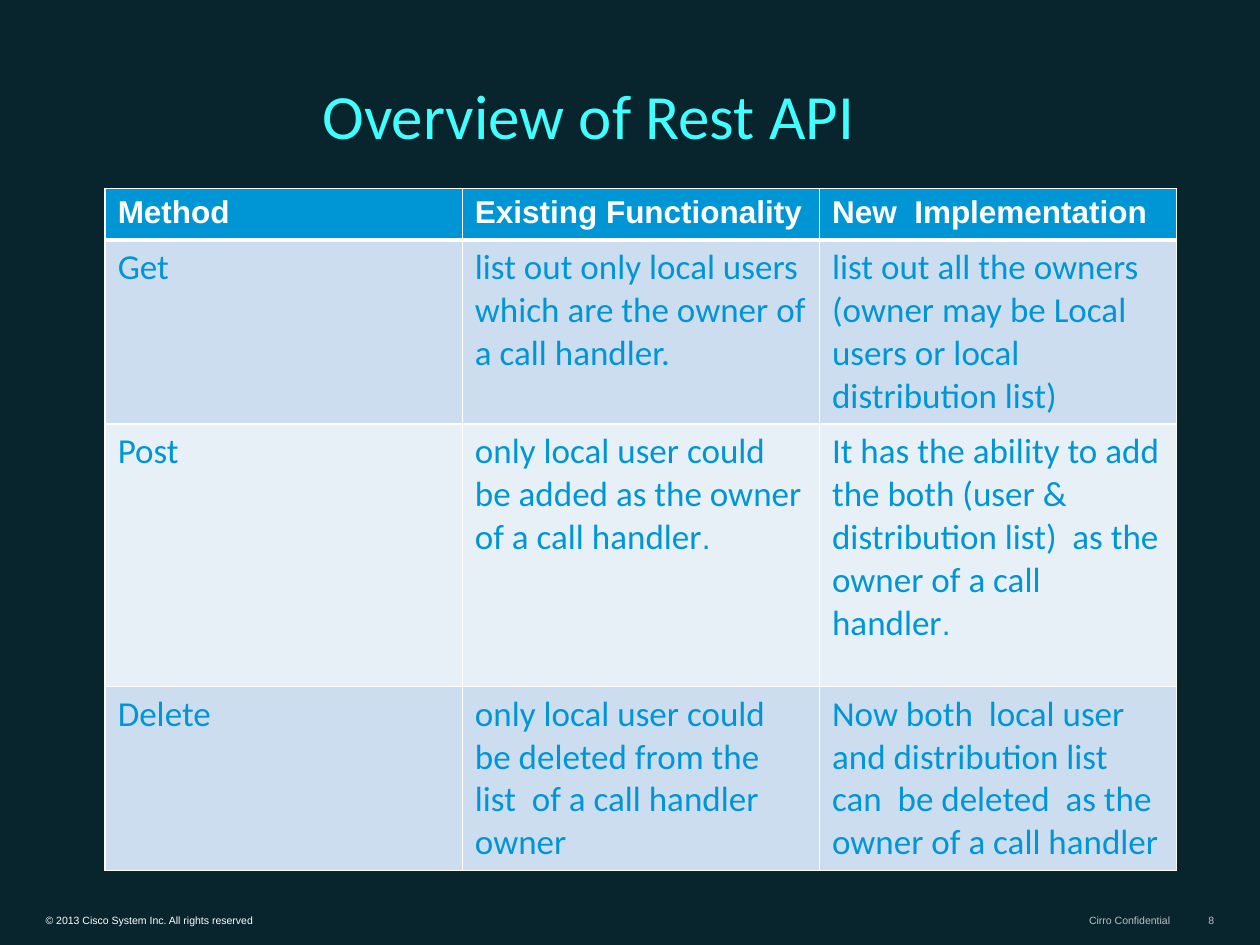
from dataclasses import dataclass

from lxml import etree
from pptx import Presentation
from pptx.dml.color import RGBColor
from pptx.enum import text as t
from pptx.oxml import ns
from pptx.util import Cm, Pt

BLUE, WHITE, GREY = "0096D6", "FFFFFF", "C0C0C0"
BANDS = ("CCDDF0", "E7EFF7")


@dataclass
class Box:
    words: str
    left: float
    top: float
    width: float
    height: float
    size: float = 6
    font: str = "Arial"
    color: str = GREY
    wrap: bool = False
    right: bool = True
    pad: float = 0.1
    indent: float = 0
    space: float = 1


@dataclass
class Row:
    height: float
    cells: tuple[str, str, str]
    stop: bool = False  # closing full stop in a smaller font


TITLE = Box("Overview of Rest API", 2.26, 0.84, 21.59, 2.34, size=36,
            font="Calibri", color="40FFFE", wrap=True, right=False,
            pad=0.13, indent=4.01, space=0.8)
FOOTERS = (
    Box("© 2013 Cisco System Inc. All rights reserved", 0.69, 18.29, 9.5, 0.48,
        color=WHITE, wrap=True, right=False),
    Box("Cirro Confidential", 21.56, 18.29, 2.26, 0.48),
    Box("8", 24, 18.29, 0.71, 0.48),
)
HEAD = Row(1.04, ("Method", "Existing Functionality", "New  Implementation"))
ROWS = (
    Row(3.71, (
        "Get",
        "list out only local users which are the owner of a call handler.",
        "list out all the owners (owner may be Local users or local "
        "distribution list)")),
    Row(5.29, (
        "Post",
        "only local user could be added as the owner of a call handler",
        "It has the ability to add the both (user & distribution list)  "
        "as the owner of a call handler"), stop=True),
    Row(3.71, (
        "Delete",
        "only local user could be deleted from the list  of a call handler "
        "owner",
        "Now both  local user and distribution list can  be deleted  as the "
        "owner of a call handler")),
)


def paint(fill, color: str) -> None:
    fill.solid()
    fill.fore_color.rgb = RGBColor.from_string(color)


def write(para, words: str, *, size: float, color: str, font: str = "Calibri",
          bold: bool = False) -> None:
    run = para.add_run()
    run.text = words
    run.font.name, run.font.size, run.font.bold = font, Pt(size), bold
    paint(run.font.fill, color)


def draw_box(slide, box: Box) -> None:
    shape = slide.shapes.add_textbox(
        Cm(box.left), Cm(box.top), Cm(box.width), Cm(box.height))
    frame = shape.text_frame
    frame.word_wrap = box.wrap
    frame.vertical_anchor = t.MSO_ANCHOR.BOTTOM
    frame.margin_left = frame.margin_right = Cm(0.23)
    frame.margin_top = frame.margin_bottom = Cm(box.pad)
    para = frame.paragraphs[0]
    para.alignment = t.PP_ALIGN.RIGHT if box.right else t.PP_ALIGN.LEFT
    para.line_spacing = box.space
    if box.indent:
        para._p.get_or_add_pPr().set("marL", str(Cm(box.indent)))
    write(para, box.words, size=box.size, color=box.color, font=box.font)


def edge(cell, base: float) -> None:
    """Rule the cell in white, with its own width at the base."""
    props = cell._tc.get_or_add_tcPr()
    widths = {"lnL": 1, "lnR": 1, "lnT": 1, "lnB": base}
    for spot, (tag, width) in enumerate(widths.items()):
        line = etree.Element(ns.qn("a:" + tag), w=str(Pt(width)))
        fill = etree.SubElement(line, ns.qn("a:solidFill"))
        etree.SubElement(fill, ns.qn("a:srgbClr"), val=WHITE)
        props.insert(spot, line)


def draw_table(slide, rows: tuple[Row, ...]) -> None:
    high = sum(row.height for row in rows)
    grid = slide.shapes.add_table(
        len(rows), 3, Cm(2.12), Cm(3.8), Cm(21.6), Cm(high)).table
    for col in grid.columns:
        col.width = Cm(7.2)
    for i, row in enumerate(rows):
        head = i == 0
        grid.rows[i].height = Cm(row.height)
        for j, words in enumerate(row.cells):
            cell = grid.cell(i, j)
            paint(cell.fill, BLUE if head else BANDS[(i - 1) % 2])
            # The rule under the header is heavier on both sides of the joint
            edge(cell, 3 if head else 1)
            if i == 1:
                cell._tc.tcPr.find(ns.qn("a:lnT")).set("w", str(Pt(3)))
            para = cell.text_frame.paragraphs[0]
            if head:
                write(para, words, size=18, color=WHITE, font="Arial",
                      bold=True)
            else:
                write(para, words, size=20, color=BLUE)
            if row.stop and j:
                write(para, ".", size=18, color=BLUE, font="Arial")


def main() -> None:
    deck = Presentation()
    deck.slide_width, deck.slide_height = Cm(25.4), Cm(19.05)
    slide = deck.slides.add_slide(deck.slide_layouts[6])
    paint(slide.background.fill, "08252E")

    # Footer and title
    for box in (*FOOTERS, TITLE):
        draw_box(slide, box)

    # Method comparison
    draw_table(slide, (HEAD, *ROWS))
    deck.save("out.pptx")


if __name__ == "__main__":
    main()
